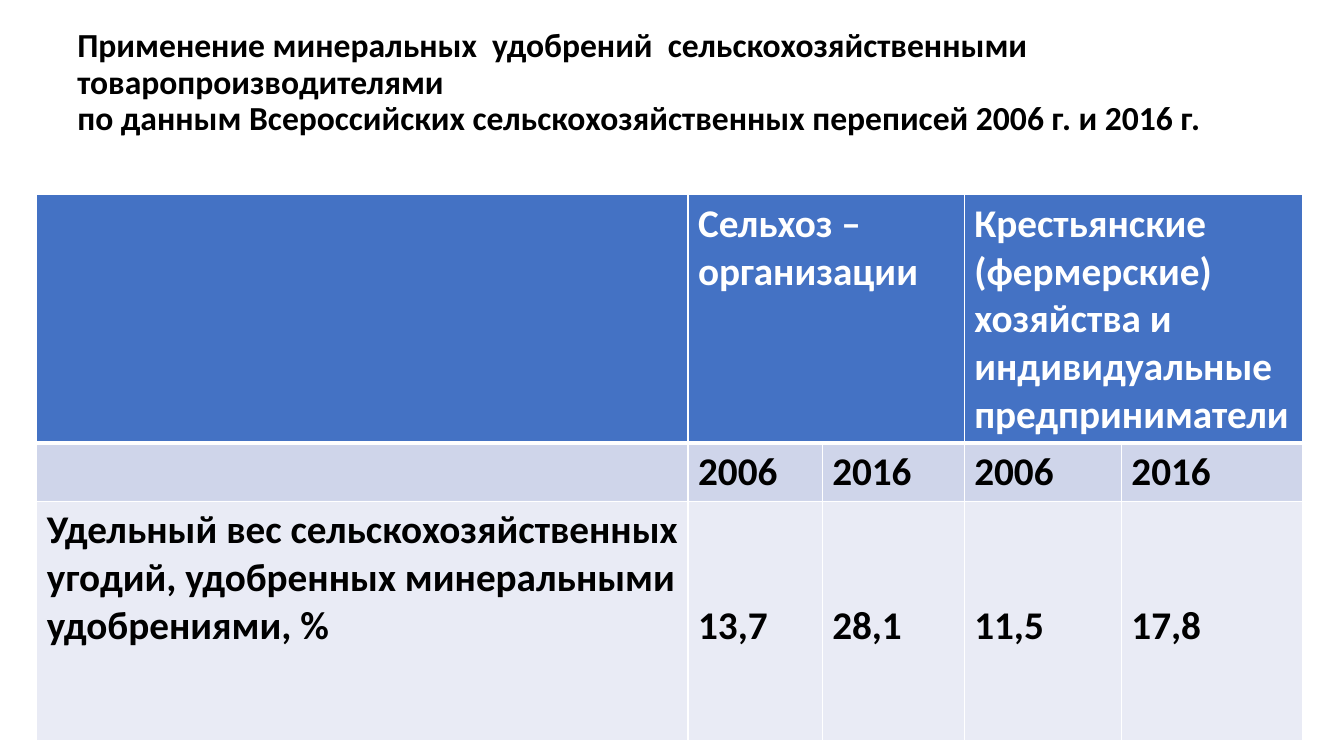
import pptx
import pptx.util
import pptx.dml.color
import pptx.enum.text
import pptx.oxml
import pptx.oxml.ns
from pptx.util import Cm

# Content
TITLE = [
    "Применение минеральных  удобрений  сельскохозяйственными товаропроизводителями",
    "по данным Всероссийских сельскохозяйственных переписей 2006 г. и 2016 г.",
]
GROUPS = [
    ["Сельхоз –", "организации"],
    ["Крестьянские (фермерские) хозяйства и индивидуальные предприниматели"],
]
YEARS = ["2006", "2016"]
INDICATOR = "Удельный вес сельскохозяйственных угодий, удобренных минеральными удобрениями, %"
VALUES = ["13,7", "28,1", "11,5", "17,8"]

THEME = {
    "font": "Calibri", "title": 24, "cell": 28,
    "text": "000000", "header_text": "FFFFFF", "border": "FFFFFF",
    "rows": ["4472C4", "CFD5EA", "E9EBF5"],
}
COL_WIDTHS = [16.41, 3.38, 3.58, 3.96, 4.57]
ROW_HEIGHTS = [6.25, 1.47, 6.02]
VALUE_TOP = 2.54  # puts the values level with the indicator's third line


def rgb(code):
    return pptx.dml.color.RGBColor.from_string(code)


def write(tf, lines, size, color=THEME["text"], spacing=None):
    tf.word_wrap = True
    for i, line in enumerate(lines):
        p = tf.add_paragraph() if i else tf.paragraphs[0]
        if spacing:
            p.line_spacing = spacing
        r = p.add_run()
        r.text = line
        r.font.name = THEME["font"]
        r.font.size = pptx.util.Pt(size)
        r.font.bold = True
        r.font.color.rgb = rgb(color)


def add_borders(cell, **widths):
    tc_pr = cell._tc.get_or_add_tcPr()
    for side in "LRTB":
        width = pptx.util.Pt(widths.get(side, 1))
        tc_pr.append(pptx.oxml.parse_xml(
            f'<a:ln{side} {pptx.oxml.ns.nsdecls("a")} w="{width}"><a:solidFill>'
            f'<a:srgbClr val="{THEME["border"]}"/></a:solidFill></a:ln{side}>'))


prs = pptx.Presentation()
prs.slide_width, prs.slide_height = Cm(33.87), Cm(19.05)
s = prs.slides.add_slide(prs.slide_layouts[6])

# Title, raised by one line within its box
tf = s.shapes.add_textbox(Cm(1.7), Cm(0.48), Cm(30.2), Cm(4.17)).text_frame
tf.vertical_anchor = pptx.enum.text.MSO_ANCHOR.MIDDLE
tf.margin_bottom = Cm(1.06)
write(tf, TITLE, THEME["title"], spacing=0.9)

# Table grid
table = s.shapes.add_table(
    len(ROW_HEIGHTS), len(COL_WIDTHS), Cm(0.93), Cm(4.91),
    Cm(sum(COL_WIDTHS)), Cm(sum(ROW_HEIGHTS))).table
for col, width in zip(table.columns, COL_WIDTHS):
    col.width = Cm(width)
for i, (row, height) in enumerate(zip(table.rows, ROW_HEIGHTS)):
    row.height = Cm(height)
    for cell in row.cells:
        add_borders(cell, B=3 if i == 0 else 1, T=3 if i == 1 else 1)
        cell.fill.solid()
        cell.fill.fore_color.rgb = rgb(THEME["rows"][i])

# Header: each group spans its years
for i, lines in enumerate(GROUPS):
    first = 1 + i * len(YEARS)
    cell = table.cell(0, first)
    cell.merge(table.cell(0, first + len(YEARS) - 1))
    write(cell.text_frame, lines, THEME["cell"], color=THEME["header_text"])

# Years and values
write(table.cell(2, 0).text_frame, [INDICATOR], THEME["cell"])
for c, (year, value) in enumerate(zip(YEARS * len(GROUPS), VALUES), start=1):
    write(table.cell(1, c).text_frame, [year], THEME["cell"])
    cell = table.cell(2, c)
    cell.margin_top = Cm(VALUE_TOP)
    write(cell.text_frame, [value], THEME["cell"])

prs.save("out.pptx")
